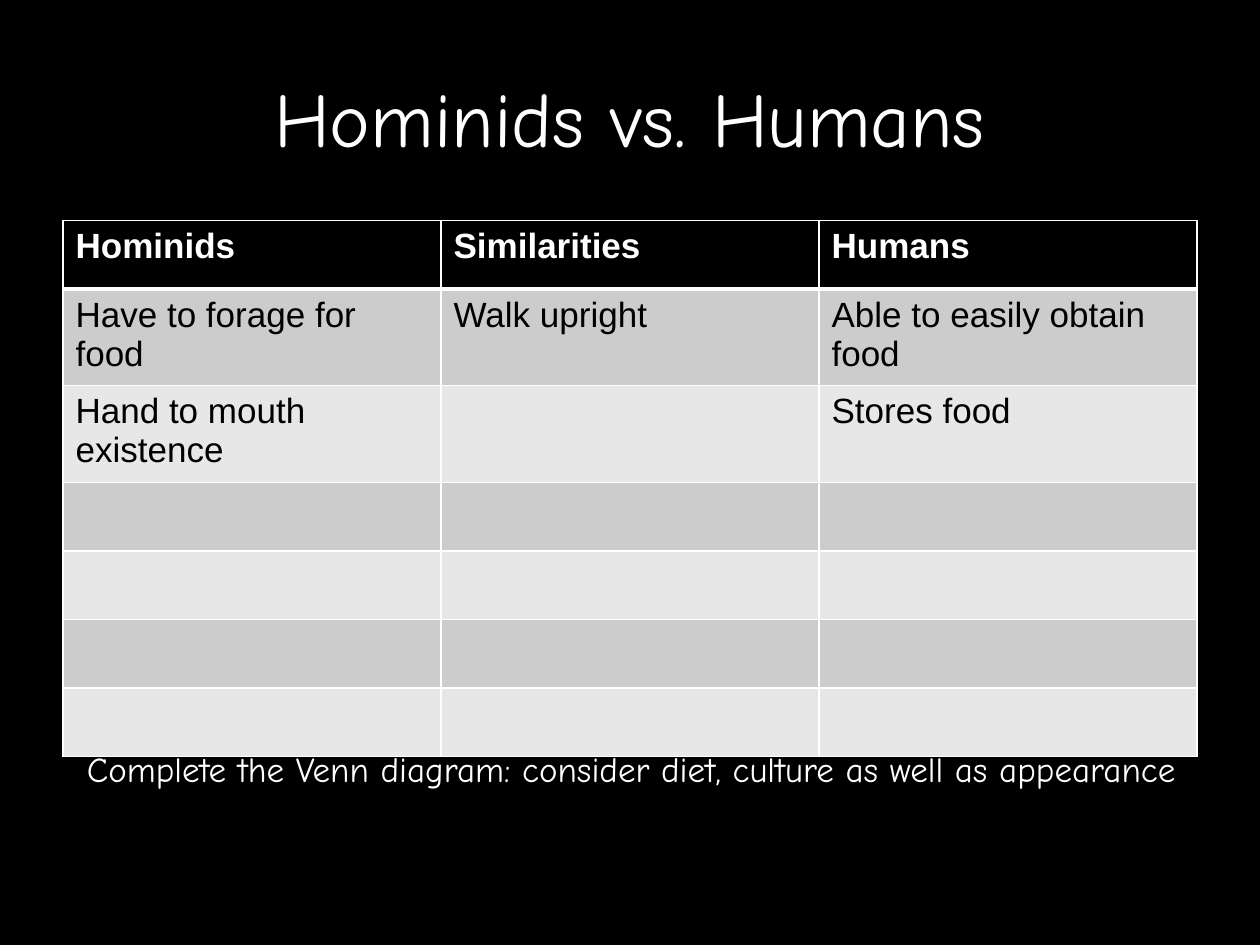
import pptx
import pptx.dml.color
import pptx.enum.text
import pptx.oxml
import pptx.oxml.ns
import pptx.util

Pt = pptx.util.Pt
RGB = pptx.dml.color.RGBColor.from_string
ALIGN = pptx.enum.text.PP_ALIGN
ANCHOR = pptx.enum.text.MSO_ANCHOR
AUTO = pptx.enum.text.MSO_AUTO_SIZE

TITLE = "Hominids vs. Humans"
CAPTION = "Complete the Venn diagram: consider diet, culture as well as appearance"
ROWS = [
    ("Hominids", "Similarities", "Humans"),
    ("Have to forage for food", "Walk upright", "Able to easily obtain food"),
    ("Hand to mouth existence", "", "Stores food"),
] + [("", "", "")] * 4

THEME = {
    "background": "000000",
    "grid": "FFFFFF",
    "header_fill": "000000",
    "bands": ("CCCCCC", "E7E7E7"),
    "title": {"name": "Comic Neue", "size": Pt(44), "color": "FFFFFF"},
    "caption": {"name": "Comic Neue", "size": Pt(20), "color": "FFFFFF"},
    "header": {"name": "Arial", "size": Pt(20), "bold": True, "color": "FFFFFF"},
    "body": {"name": "Arial", "size": Pt(20), "bold": False, "color": "000000"},
}
TABLE_LEFT, TABLE_TOP, TABLE_WIDTH, ROW_HEIGHT = 36, 126, 648, 39.2
THIN, THICK = 1, 3


def write(tf, text, style, align):
    p = tf.paragraphs[0]
    p.alignment = align
    if not text:
        return
    r = p.add_run()
    r.text = text
    for key, value in style.items():
        if key == "color":
            r.font.color.rgb = RGB(value)
        else:
            setattr(r.font, key, value)


def add_text(s, box, text, style, align, **frame):
    tf = s.shapes.add_textbox(*map(Pt, box)).text_frame
    for key, value in {"word_wrap": True, **frame}.items():
        setattr(tf, key, value)
    write(tf, text, style, align)


def set_borders(cell, widths):
    tc_pr = cell._tc.get_or_add_tcPr()
    for i, (side, width) in enumerate(widths.items()):
        tc_pr.insert(i, pptx.oxml.parse_xml(
            f'<a:ln{side} {pptx.oxml.ns.nsdecls("a")} w="{Pt(width)}">'
            f'<a:solidFill><a:srgbClr val="{THEME["grid"]}"/></a:solidFill>'
            f'</a:ln{side}>'))


def add_comparison(s):
    box = TABLE_LEFT, TABLE_TOP, TABLE_WIDTH, ROW_HEIGHT * len(ROWS)
    table = s.shapes.add_table(len(ROWS), len(ROWS[0]), *map(Pt, box)).table
    for column in table.columns:
        column.width = Pt(TABLE_WIDTH / len(ROWS[0]))
    for i, texts in enumerate(ROWS):
        table.rows[i].height = Pt(ROW_HEIGHT)
        fill = THEME["bands"][(i - 1) % 2] if i else THEME["header_fill"]
        style = THEME["body" if i else "header"]
        for j, text in enumerate(texts):
            cell = table.cell(i, j)
            cell.fill.solid()
            cell.fill.fore_color.rgb = RGB(fill)
            write(cell.text_frame, text, style, ALIGN.LEFT)
            set_borders(cell, {"L": THIN, "R": THIN,
                               "T": THICK if i == 1 else THIN,
                               "B": THICK if i == 0 else THIN})


def main():
    prs = pptx.Presentation()
    prs.slide_width, prs.slide_height = Pt(720), Pt(540)
    s = prs.slides.add_slide(prs.slide_layouts[6])
    s.background.fill.solid()
    s.background.fill.fore_color.rgb = RGB(THEME["background"])
    add_text(s, (36, 21.6, 648, 90), TITLE, THEME["title"], ALIGN.CENTER,
             vertical_anchor=ANCHOR.MIDDLE)
    add_comparison(s)
    add_text(s, (42.5, 423.4, 646.6, 55.4), CAPTION, THEME["caption"], ALIGN.LEFT,
             auto_size=AUTO.SHAPE_TO_FIT_TEXT)
    prs.save("out.pptx")


if __name__ == "__main__":
    main()
